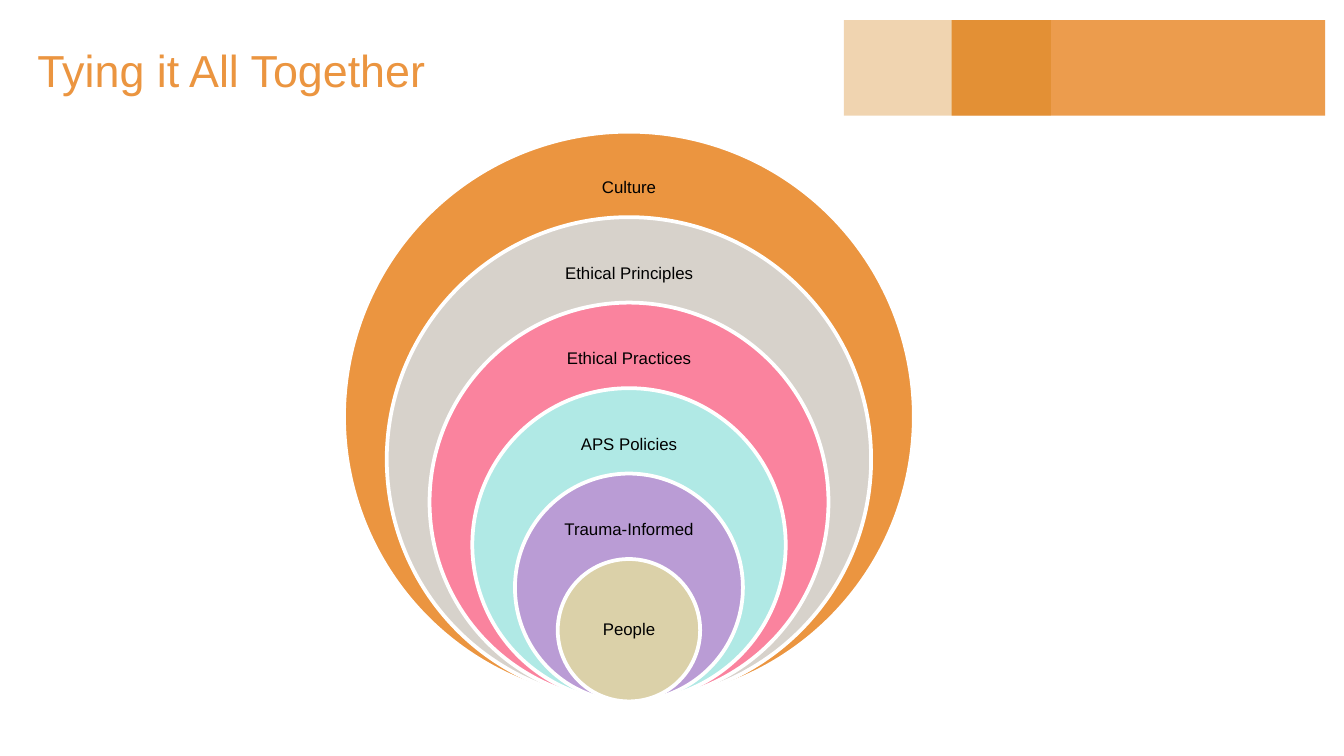
from lxml import etree
from pptx import Presentation
from pptx.dml.color import RGBColor
from pptx.enum.shapes import MSO_SHAPE
from pptx.enum.text import MSO_ANCHOR, PP_ALIGN
from pptx.oxml.ns import qn
from pptx.util import Inches, Pt

RECTANGLE, OVAL = MSO_SHAPE.RECTANGLE, MSO_SHAPE.OVAL
MIDDLE = MSO_ANCHOR.MIDDLE
LEFT, CENTER = PP_ALIGN.LEFT, PP_ALIGN.CENTER

COLORS = {
    "orange": "EB9540",
    "dark orange": "D07700",
    "gray": "D7D2CB",
    "pink": "FA839E",
    "aqua": "B0E9E5",
    "purple": "BA9CD5",
    "sand": "DBD1A9",
    "white": "FFFFFF",
    "black": "000000",
}

# Label, colour, label width, label height; outermost circle first
LAYERS = [
    ("Culture", "orange", 1.59, 0.42),
    ("Ethical Principles", "gray", 1.55, 0.41),
    ("Ethical Practices", "pink", 1.54, 0.41),
    ("APS Policies", "aqua", 1.26, 0.42),
    ("Trauma-Informed", "purple", 1.12, 0.42),
    ("People", "sand", 0.75, 0.53),
]
CENTER_X = 4.68
BOTTOM = 5.22
OUTER_DIAMETER = 4.24
INNER_DIAMETER = 1.06
LABEL_DROP = 0.42


def color(name):
    return RGBColor.from_string(COLORS[name])


def add_filled_shape(page, kind, left, top, width, height, fill):
    shape = page.shapes.add_shape(
        kind, Inches(left), Inches(top), Inches(width), Inches(height))
    shape.shadow.inherit = False
    shape.fill.solid()
    shape.fill.fore_color.rgb = color(fill)
    return shape


def add_banner_block(page, left, width, fill, opacity):
    """Borderless see-through rectangle; opacity is a percentage."""
    block = add_filled_shape(page, RECTANGLE, left, 0.15, width, 0.71, fill)
    block.line.fill.background()
    fill_color = block.fill._xPr.find(qn("a:solidFill"))[0]
    etree.SubElement(fill_color, qn("a:alpha"), val=str(opacity * 1000))


def add_text(page, text, left, top, width, height, size, ink, align,
             inset, spacing):
    box = page.shapes.add_textbox(
        Inches(left), Inches(top), Inches(width), Inches(height))
    frame = box.text_frame
    frame.word_wrap = True
    frame.vertical_anchor = MIDDLE
    for side in ("left", "top", "right", "bottom"):
        setattr(frame, f"margin_{side}", Inches(inset))
    para = frame.paragraphs[0]
    para.alignment = align
    para.line_spacing = spacing
    span = para.add_run()
    span.text = text
    for name, value in {"name": "Arial", "size": Pt(size)}.items():
        setattr(span.font, name, value)
    span.font.color.rgb = color(ink)


def add_nested_circles(page):
    """Circles that share their lowest point, each with its label."""
    last = len(LAYERS) - 1
    step = (OUTER_DIAMETER - INNER_DIAMETER) / last
    for index, (label, fill, width, height) in enumerate(LAYERS):
        diameter = OUTER_DIAMETER - index * step
        top = BOTTOM - diameter
        circle = add_filled_shape(page, OVAL, CENTER_X - diameter / 2, top,
                                  diameter, diameter, fill)
        circle.line.color.rgb = color("white")
        circle.line.width = Pt(2)
        middle = top + (diameter / 2 if index == last else LABEL_DROP)
        add_text(page, label, CENTER_X - width / 2, middle - height / 2,
                 width, height, 9, "black", CENTER, 0.07, 0.9)


def main():
    deck = Presentation()
    deck.slide_width = Inches(10)
    deck.slide_height = Inches(10 * 9 / 16)
    page = deck.slides.add_slide(deck.slide_layouts[6])
    add_banner_block(page, 7.08, 2.78, "orange", 93)
    add_banner_block(page, 6.28, 1.54, "dark orange", 31)
    add_text(page, "Tying it All Together", 0.18, 0.05, 9, 0.94,
             24, "orange", LEFT, 0.1, 1.0)
    add_nested_circles(page)
    deck.save("out.pptx")


if __name__ == "__main__":
    main()
